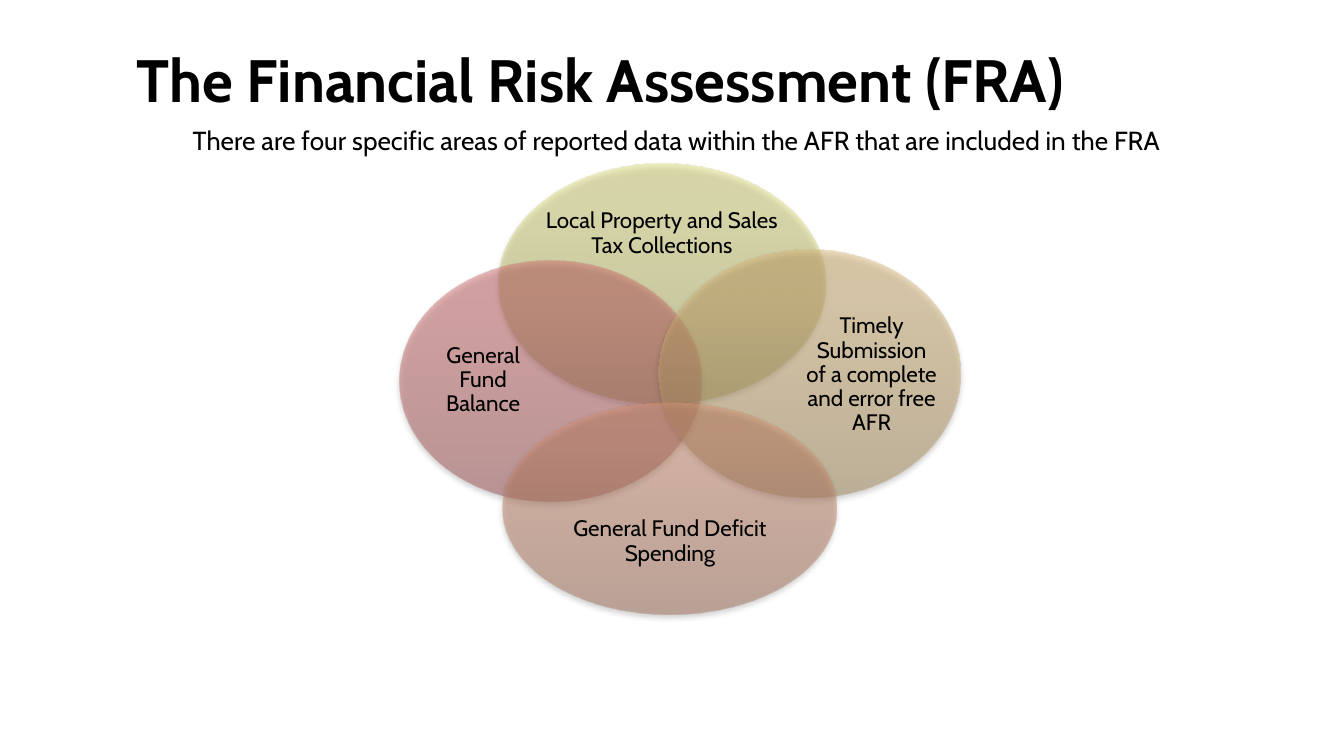
from dataclasses import dataclass

from lxml import etree
from pptx import Presentation
from pptx.dml.color import RGBColor
from pptx.enum import shapes, text
from pptx.oxml.ns import qn
from pptx.util import Inches, Pt

FONT = "Cabin"
COLORS = {
    "text": "000000",
    "shadow": "000000",
    "green": ("A9A761", "DBD97E", "DEDB7D"),
    "red": ("9E5555", "CE6E6E", "D16D6D"),
    "gold": ("A68C5D", "D7B678", "DAB777"),
    "rust": ("A27059", "D39273", "D59272"),
}
STOPS = (0, 80, 100)
Box = tuple[float, float, float, float]


@dataclass
class Area:
    label: str
    color: str
    oval: Box
    label_box: Box


AREAS = [
    Area("Local Property and Sales Tax Collections", "green",
         (3.71, 1.22, 2.43, 1.78), (3.99, 1.46, 1.87, 0.56)),
    Area("General Fund Balance", "red",
         (2.97, 1.94, 2.25, 1.79), (3.14, 2.14, 0.91, 1.38)),
    Area("Timely Submission of a complete and error free AFR", "gold",
         (4.9, 1.86, 2.25, 1.84), (5.99, 2.08, 0.99, 1.42)),
    Area("General Fund Deficit Spending", "rust",
         (3.74, 3, 2.48, 1.57), (4.03, 3.79, 1.91, 0.48)),
]


def add_text(s, box: Box, words: str, size: float, bold: bool = False,
             align=text.PP_ALIGN.CENTER, wrap: bool = True):
    tb = s.shapes.add_textbox(*map(Inches, box))
    tf = tb.text_frame
    tf.word_wrap = wrap
    p = tf.paragraphs[0]
    p.text = words
    p.alignment = align
    p.font.name = FONT
    p.font.size = Pt(size)
    p.font.bold = bold
    p.font.color.rgb = RGBColor.from_string(COLORS["text"])
    return tf


def add_color(parent, color: str, alpha: int) -> None:
    """Append a colour with the given opacity in percent."""
    clr = etree.SubElement(parent, qn("a:srgbClr"), val=color)
    etree.SubElement(clr, qn("a:alpha"), val=str(alpha * 1000))


def add_oval(s, box: Box, colors: tuple[str, ...]) -> None:
    """Draw a translucent oval, shaded from the bottom up, with a soft shadow."""
    sp = s.shapes.add_shape(shapes.MSO_SHAPE.OVAL, *map(Inches, box))
    sp.line.fill.background()
    sp.fill.gradient()
    sp.fill.gradient_angle = 90
    stops = sp._element.spPr.find(".//" + qn("a:gsLst"))
    for old in list(stops):
        stops.remove(old)
    for pos, color in zip(STOPS, colors):
        add_color(etree.SubElement(stops, qn("a:gs"), pos=str(pos * 1000)), color, 50)

    sp.shadow.inherit = False
    effects = sp._element.spPr.find(qn("a:effectLst"))
    shadow = etree.SubElement(
        effects, qn("a:outerShdw"), blurRad=str(Pt(3.1)), dist=str(Pt(1.8)),
        dir=str(90 * 60000), rotWithShape="0")
    add_color(shadow, COLORS["shadow"], 35)


def add_area(s, area: Area) -> None:
    add_oval(s, area.oval, COLORS[area.color])
    tf = add_text(s, area.label_box, area.label, 12)
    tf.margin_left = tf.margin_right = tf.margin_top = tf.margin_bottom = 0
    tf.vertical_anchor = text.MSO_ANCHOR.MIDDLE
    tf.paragraphs[0].line_spacing = 0.9


def main() -> None:
    prs = Presentation()
    prs.slide_width = Inches(10)
    prs.slide_height = Inches(10 * 9 / 16)
    s = prs.slides.add_slide(prs.slide_layouts[6])

    title = add_text(s, (0.92, 0.27, 8.13, 0.64), "The Financial Risk Assessment (FRA)",
                     32, bold=True, align=text.PP_ALIGN.LEFT, wrap=False)
    subtitle = add_text(
        s, (0.74, 0.88, 8.59, 0.34),
        "There are four specific areas of reported data within the AFR "
        "that are included in the FRA", 14)
    for tf in (title, subtitle):
        tf.auto_size = text.MSO_AUTO_SIZE.SHAPE_TO_FIT_TEXT

    for area in AREAS:
        add_area(s, area)
    prs.save("out.pptx")


if __name__ == "__main__":
    main()
